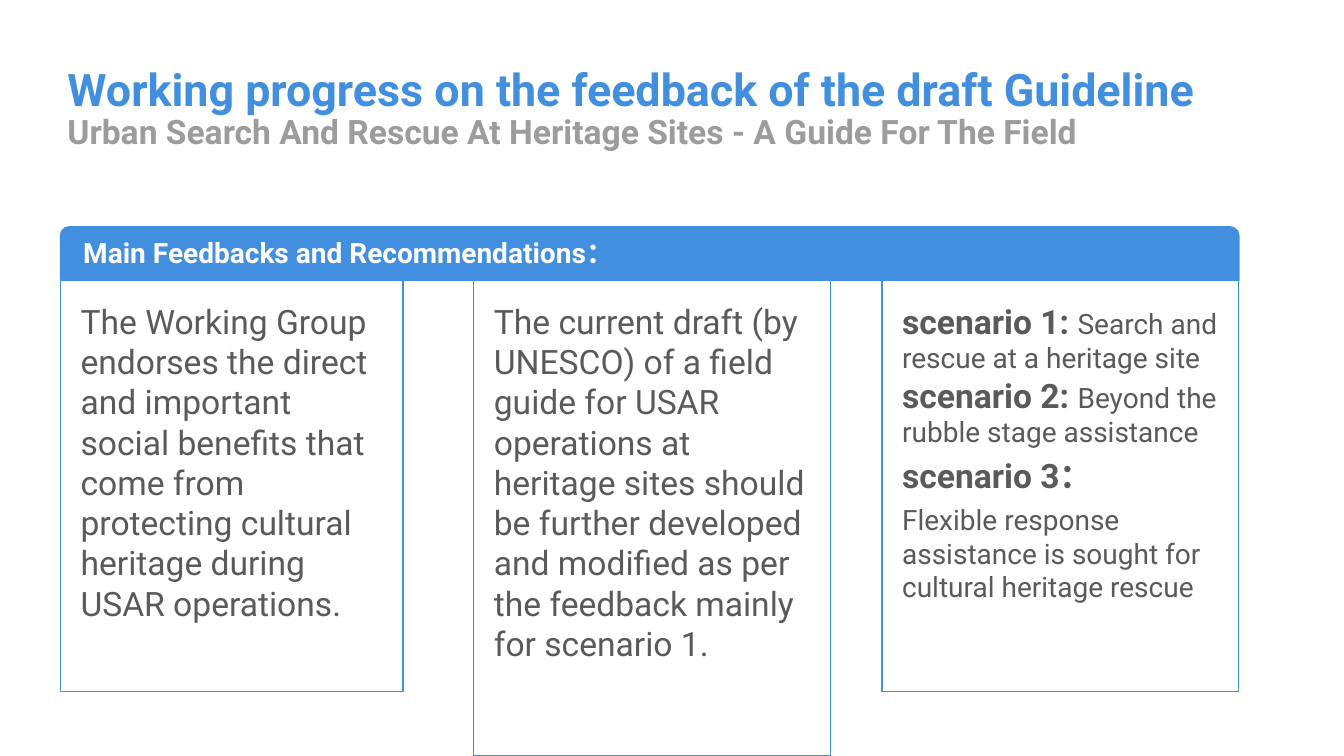
import pptx
import pptx.util
import pptx.dml.color
import pptx.enum.shapes
import pptx.enum.text

Pt = pptx.util.Pt
SHAPE = pptx.enum.shapes.MSO_SHAPE
ANCHOR = pptx.enum.text.MSO_ANCHOR
ALIGN = pptx.enum.text.PP_ALIGN

COLORS = {"blue": "418FDE", "gray": "9C9C9C", "text": "5A5A5A", "white": "FFFFFF"}
FONT = "Roboto"
LEFT, PANEL_TOP = 43.2, 200.2

PANELS = [
    (LEFT, 244.8, 293.8, [[(
        "The Working Group endorses the direct and important social benefits "
        "that come from protecting cultural heritage during USAR operations.", 24, False)]]),
    (338.4, 254.9, 339.8, [[(
        "The current draft (by UNESCO) of a field guide for USAR operations at "
        "heritage sites should be further developed and modified as per the "
        "feedback mainly for scenario 1.", 24, False)]]),
    (630, 254.9, 293.8, [
        [("scenario 1: ", 24, True),
         ("Search and rescue at a heritage site ", 20, False),
         ("scenario 2: ", 24, True),
         ("Beyond the rubble stage assistance", 20, False)],
        [("scenario 3：", 24, True)],
        [("Flexible response assistance is sought for cultural heritage rescue", 20, False)],
    ]),
]


def rgb(name):
    return pptx.dml.color.RGBColor.from_string(COLORS[name])


def set_attrs(obj, values):
    for name, value in values.items():
        setattr(obj, name, value)


def write(sp, paragraphs, color, inset=(0, 0), anchor=ANCHOR.TOP, spacing=1.0, after=5):
    tf = sp.text_frame
    x, y = map(Pt, inset)
    set_attrs(tf, {"word_wrap": True, "vertical_anchor": anchor,
                   "margin_left": x, "margin_right": x,
                   "margin_top": y, "margin_bottom": y})
    for i, runs in enumerate(paragraphs):
        p = tf.add_paragraph() if i else tf.paragraphs[0]
        set_attrs(p, {"alignment": ALIGN.LEFT, "line_spacing": spacing,
                      "space_after": Pt(after)})
        for text, size, bold in runs:
            r = p.add_run()
            r.text = text
            set_attrs(r.font, {"name": FONT, "size": Pt(size), "bold": bold})
            r.font.color.rgb = rgb(color)


def add_heading(s, box, text, size, color, **layout):
    sp = s.shapes.add_textbox(*map(Pt, box))
    write(sp, [[(text, size, True)]], color, spacing=0.9, **layout)


def add_box(s, kind, box, fill=None):
    sp = s.shapes.add_shape(kind, *map(Pt, box))
    sp.shadow.inherit = False
    if fill:
        sp.fill.solid()
        sp.fill.fore_color.rgb = rgb(fill)
    else:
        sp.fill.background()
    sp.line.color.rgb = rgb("blue")
    sp.line.width = Pt(1)
    return sp


def add_banner(s, text):
    sp = add_box(s, SHAPE.ROUND_2_SAME_RECTANGLE, (LEFT, 162, 841.7, 38.2), "blue")
    write(sp, [[(text, 20, True)]], "white", inset=(14.4, 7.2), spacing=0.9)


def add_panel(s, left, width, height, paragraphs):
    sp = add_box(s, SHAPE.RECTANGLE, (left, PANEL_TOP, width, height))
    write(sp, paragraphs, "text", inset=(14.4, 14.4))


def main():
    prs = pptx.Presentation()
    set_attrs(prs, {"slide_width": Pt(960), "slide_height": Pt(540)})
    s = prs.slides.add_slide(prs.slide_layouts[6])
    add_heading(s, (48.2, 48.2, 809.3, 34.6),
                "Working progress on the feedback of the draft Guideline",
                32, "blue", anchor=ANCHOR.MIDDLE, after=0)
    add_heading(s, (48.2, 82.8, 835.9, 30.2),
                "Urban Search And Rescue At Heritage Sites - A Guide For The Field",
                24, "gray")
    for panel in PANELS:
        add_panel(s, *panel)
    add_banner(s, "Main Feedbacks and Recommendations：")
    prs.save("out.pptx")


if __name__ == "__main__":
    main()
